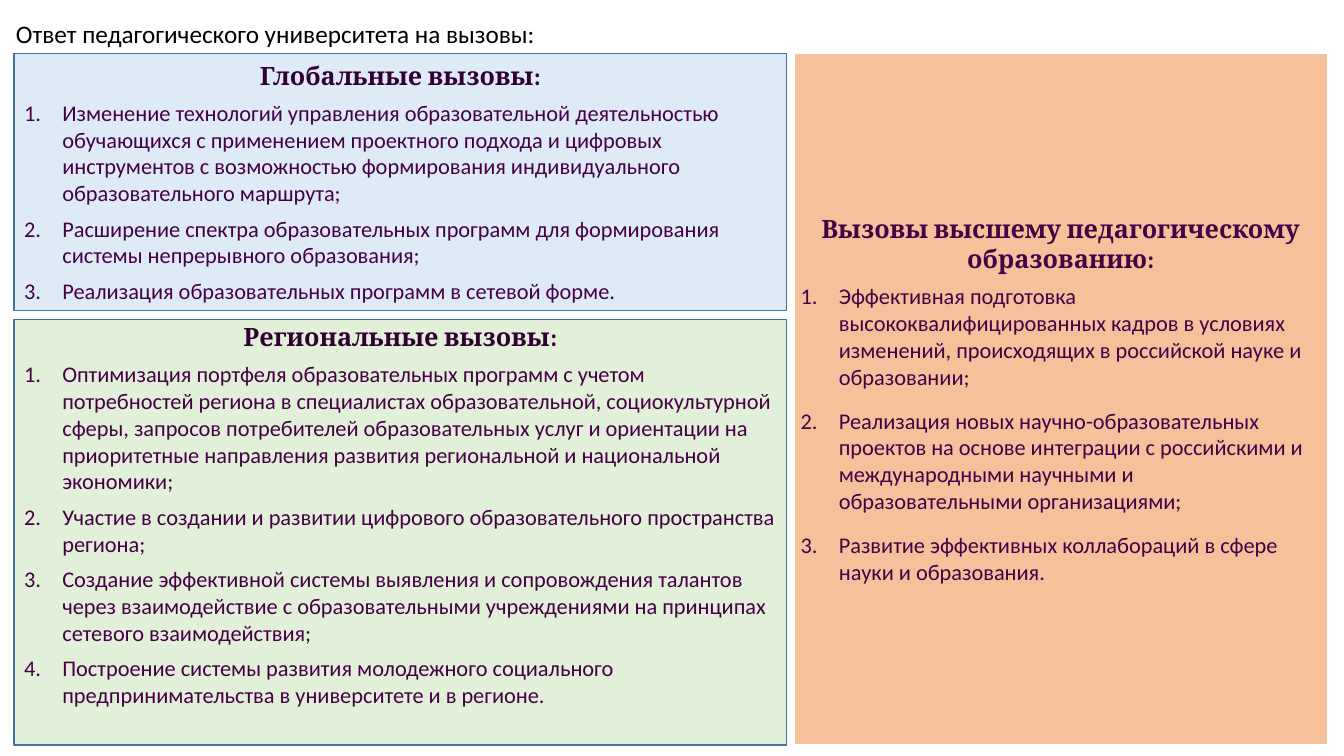
from dataclasses import dataclass

import pptx
import pptx.dml.color
import pptx.enum.shapes
import pptx.enum.text
import pptx.oxml
import pptx.oxml.ns
import pptx.util


@dataclass(frozen=True)
class Theme:
    heading_font: str = "Cambria"
    body_font: str = "Calibri"
    title_size: int = 18
    heading_size: int = 18
    body_size: int = 16
    black: str = "000000"
    dark_plum: str = "320032"
    plum: str = "460046"
    blue: str = "DEEBF7"
    green: str = "E2F0D9"
    orange: str = "F4B183"
    outline: str = "43739E"
    white: str = "FFFFFF"


@dataclass(frozen=True)
class Box:
    """An area of the slide, in inches."""
    left: float
    top: float
    width: float
    height: float

    def emu(self):
        return [pptx.util.Inches(v) for v in (self.left, self.top, self.width, self.height)]

    def columns(self, weights, gap):
        return [Box(self.left + start, self.top, size, self.height)
                for start, size in split(self.width, weights, gap)]

    def rows(self, weights, gap):
        return [Box(self.left, self.top + start, self.width, size)
                for start, size in split(self.height, weights, gap)]


@dataclass(frozen=True)
class Panel:
    heading: str
    items: tuple
    fill: str
    line: str = Theme.outline
    line_width: float = 1
    heading_color: str = Theme.dark_plum
    opacity: int = 100
    item_gap: int = 6
    insets: tuple = (0.1, 0.05, 0.1, 0.05)  # left, top, right, bottom


THEME = Theme()
WIDTH, HEIGHT = 13.33, 7.5
INDENT = 0.38

TITLE = "Ответ педагогического университета на вызовы:"
GLOBAL = Panel("Глобальные вызовы:", (
    "Изменение технологий управления образовательной деятельностью обучающихся с применением "
    "проектного подхода и цифровых инструментов с возможностью формирования индивидуального "
    "образовательного маршрута;",
    "Расширение спектра образовательных программ для формирования системы непрерывного "
    "образования;",
    "Реализация образовательных программ в сетевой форме.",
), THEME.blue)
REGIONAL = Panel("Региональные вызовы:", (
    "Оптимизация портфеля образовательных программ с учетом потребностей региона в специалистах "
    "образовательной, социокультурной сферы, запросов потребителей образовательных услуг и "
    "ориентации на приоритетные направления развития региональной и национальной экономики;",
    "Участие в создании и развитии цифрового образовательного пространства региона;",
    "Создание эффективной системы выявления и сопровождения талантов через взаимодействие с "
    "образовательными учреждениями на принципах сетевого взаимодействия;",
    "Построение системы развития молодежного социального предпринимательства в университете и "
    "в регионе.",
), THEME.green, insets=(0.1, 0.05, 0.1, 0.4))
PEDAGOGICAL = Panel("Вызовы высшему педагогическому образованию:", (
    "Эффективная подготовка высококвалифицированных кадров в условиях изменений, происходящих "
    "в российской науке и образовании;",
    "Реализация новых научно-образовательных проектов на основе интеграции с российскими и "
    "международными научными и образовательными организациями;",
    "Развитие эффективных коллабораций в сфере науки и образования.",
), THEME.orange, line=THEME.white, line_width=1.5, heading_color=THEME.plum,
    opacity=80, item_gap=12, insets=(0.07,) * 4)


def split(length, weights, gap):
    """Yield (start, size) of parts that share a length by weight."""
    unit = (length - gap * (len(weights) - 1)) / sum(weights)
    start = 0
    for weight in weights:
        yield start, weight * unit
        start += weight * unit + gap


def rgb(color):
    return pptx.dml.color.RGBColor.from_string(color)


def add_run(paragraph, text, font, size, color, bold=False):
    run = paragraph.add_run()
    run.text = text
    run.font.name = font
    run.font.size = pptx.util.Pt(size)
    run.font.bold = bold
    run.font.color.rgb = rgb(color)


def number_paragraph(paragraph):
    properties = paragraph._p.get_or_add_pPr()
    properties.set("marL", str(pptx.util.Inches(INDENT)))
    properties.set("indent", str(-pptx.util.Inches(INDENT)))
    for tag, name, value in (("a:buFont", "typeface", "+mj-lt"),
                             ("a:buAutoNum", "type", "arabicPeriod")):
        bullet = pptx.oxml.parse_xml(f"<{tag} {pptx.oxml.ns.nsdecls('a')}/>")
        bullet.set(name, value)
        properties.append(bullet)


def set_opacity(shape, percent):
    color = shape.fill._xPr.find(".//" + pptx.oxml.ns.qn("a:srgbClr"))
    color.append(pptx.oxml.parse_xml(
        f'<a:alpha {pptx.oxml.ns.nsdecls("a")} val="{percent * 1000}"/>'))


def add_title(slide, box):
    frame = slide.shapes.add_textbox(*box.emu()).text_frame
    frame.word_wrap = True
    add_run(frame.paragraphs[0], TITLE, THEME.body_font, THEME.title_size, THEME.black)


def add_panel(slide, box, panel):
    # Filled rectangle
    shape = slide.shapes.add_shape(pptx.enum.shapes.MSO_SHAPE.RECTANGLE, *box.emu())
    shape.shadow.inherit = False
    shape.fill.solid()
    shape.fill.fore_color.rgb = rgb(panel.fill)
    if panel.opacity < 100:
        set_opacity(shape, panel.opacity)
    shape.line.color.rgb = rgb(panel.line)
    shape.line.width = pptx.util.Pt(panel.line_width)

    # Text area
    frame = shape.text_frame
    frame.word_wrap = True
    frame.vertical_anchor = pptx.enum.text.MSO_ANCHOR.MIDDLE
    (frame.margin_left, frame.margin_top,
     frame.margin_right, frame.margin_bottom) = map(pptx.util.Inches, panel.insets)

    # Heading
    heading = frame.paragraphs[0]
    heading.alignment = pptx.enum.text.PP_ALIGN.CENTER
    heading.space_after = pptx.util.Pt(6)
    add_run(heading, panel.heading, THEME.heading_font, THEME.heading_size,
            panel.heading_color, bold=True)

    # Numbered list
    for text in panel.items:
        item = frame.add_paragraph()
        item.alignment = pptx.enum.text.PP_ALIGN.LEFT
        item.space_after = pptx.util.Pt(panel.item_gap)
        number_paragraph(item)
        add_run(item, text, THEME.body_font, THEME.body_size, THEME.plum)


def add_challenges_slide(presentation, box):
    slide = presentation.slides.add_slide(presentation.slide_layouts[6])
    add_title(slide, Box(box.left + 0.06, box.top + 0.13, box.width - 0.06, 0.4))

    # Two stacked panels on the left, one tall panel on the right
    body = Box(box.left + 0.14, box.top + 0.53, box.width - 0.3, box.height - 0.64)
    left, right = body.columns((7.66, 5.3), gap=0.07)
    upper, lower = left.rows((2.55, 4.22), gap=0.09)
    for area, panel in ((upper, GLOBAL), (right, PEDAGOGICAL), (lower, REGIONAL)):
        add_panel(slide, area, panel)


def main():
    presentation = pptx.Presentation()
    presentation.slide_width = pptx.util.Inches(WIDTH)
    presentation.slide_height = pptx.util.Inches(HEIGHT)
    add_challenges_slide(presentation, Box(0, 0, WIDTH, HEIGHT))
    presentation.save("out.pptx")


if __name__ == "__main__":
    main()
